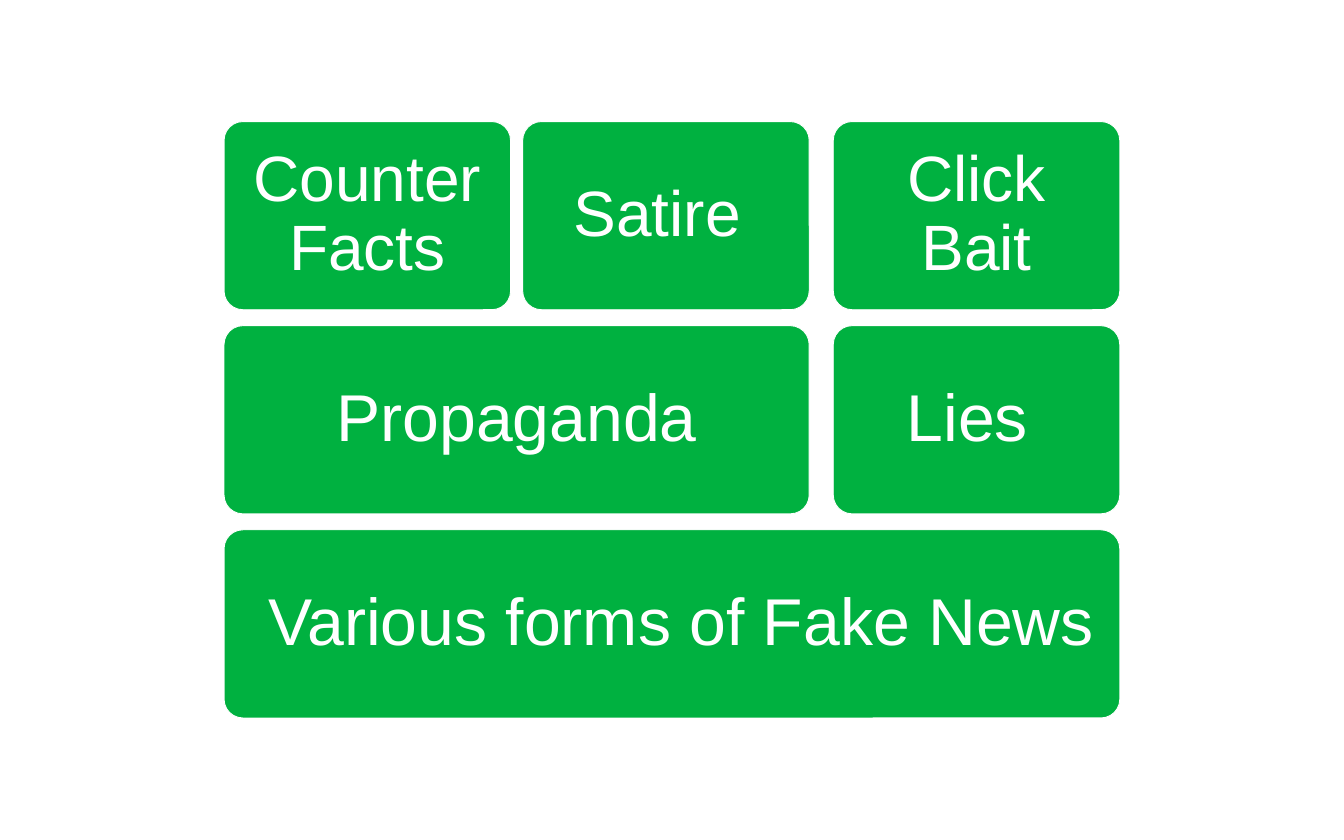
from pptx import Presentation
from pptx.dml.color import RGBColor
from pptx.enum.shapes import MSO_SHAPE
from pptx.enum.text import MSO_ANCHOR, PP_ALIGN
from pptx.util import Pt

ROUNDED = MSO_SHAPE.ROUNDED_RECTANGLE
MIDDLE = MSO_ANCHOR.MIDDLE
CENTER = PP_ALIGN.CENTER

GREEN = "00B140"
WHITE = "FFFFFF"

SLIDE_WIDTH, SLIDE_HEIGHT = 1280, 800
COLUMN_LEFTS = (213.4, 497.8, 793.6)
BLOCK_WIDTH, BLOCK_HEIGHT = 272.9, 179.2
TOP = 115.8
ROW_GAP = 15.2

TOP_ROW_SIZE = 61
LOWER_ROW_SIZE = 63

ROWS = (
    (TOP_ROW_SIZE, (("Counter Facts", 1), ("Satire ", 1), ("Click Bait", 1))),
    (LOWER_ROW_SIZE, (("Propaganda", 2), ("Lies ", 1))),
    (LOWER_ROW_SIZE, ((" Various forms of Fake News ", 3),)),
)


def color(hex_string):
    return RGBColor.from_string(hex_string)


def write(frame, text, *, size, ink=WHITE, font="Arial", inset=18.5):
    frame.word_wrap = True
    frame.vertical_anchor = MIDDLE
    frame.margin_left = frame.margin_right = Pt(inset)
    frame.margin_top = frame.margin_bottom = Pt(inset)
    paragraph = frame.paragraphs[0]
    paragraph.alignment = CENTER
    paragraph.line_spacing = 0.9
    run = paragraph.add_run()
    run.text = text
    run.font.size = Pt(size)
    run.font.name = font
    run.font.color.rgb = color(ink)


def add_block(slide, label, left, top, width, size):
    block = slide.shapes.add_shape(
        ROUNDED, Pt(left), Pt(top), Pt(width), Pt(BLOCK_HEIGHT))
    block.adjustments[0] = 0.1
    block.shadow.inherit = False
    block.fill.solid()
    block.fill.fore_color.rgb = color(GREEN)
    block.line.color.rgb = color(WHITE)
    block.line.width = Pt(0.85)
    write(block.text_frame, label, size=size)


def add_row(slide, top, size, blocks):
    first_column = 0
    for label, span in blocks:
        left = COLUMN_LEFTS[first_column]
        last_column = first_column + span - 1
        width = COLUMN_LEFTS[last_column] + BLOCK_WIDTH - left
        add_block(slide, label, left, top, width, size)
        first_column += span


def main():
    presentation = Presentation()
    presentation.slide_width = Pt(SLIDE_WIDTH)
    presentation.slide_height = Pt(SLIDE_HEIGHT)
    slide = presentation.slides.add_slide(presentation.slide_layouts[6])
    for row, (size, blocks) in enumerate(ROWS):
        add_row(slide, TOP + row * (BLOCK_HEIGHT + ROW_GAP), size, blocks)
    presentation.save("out.pptx")


if __name__ == "__main__":
    main()
